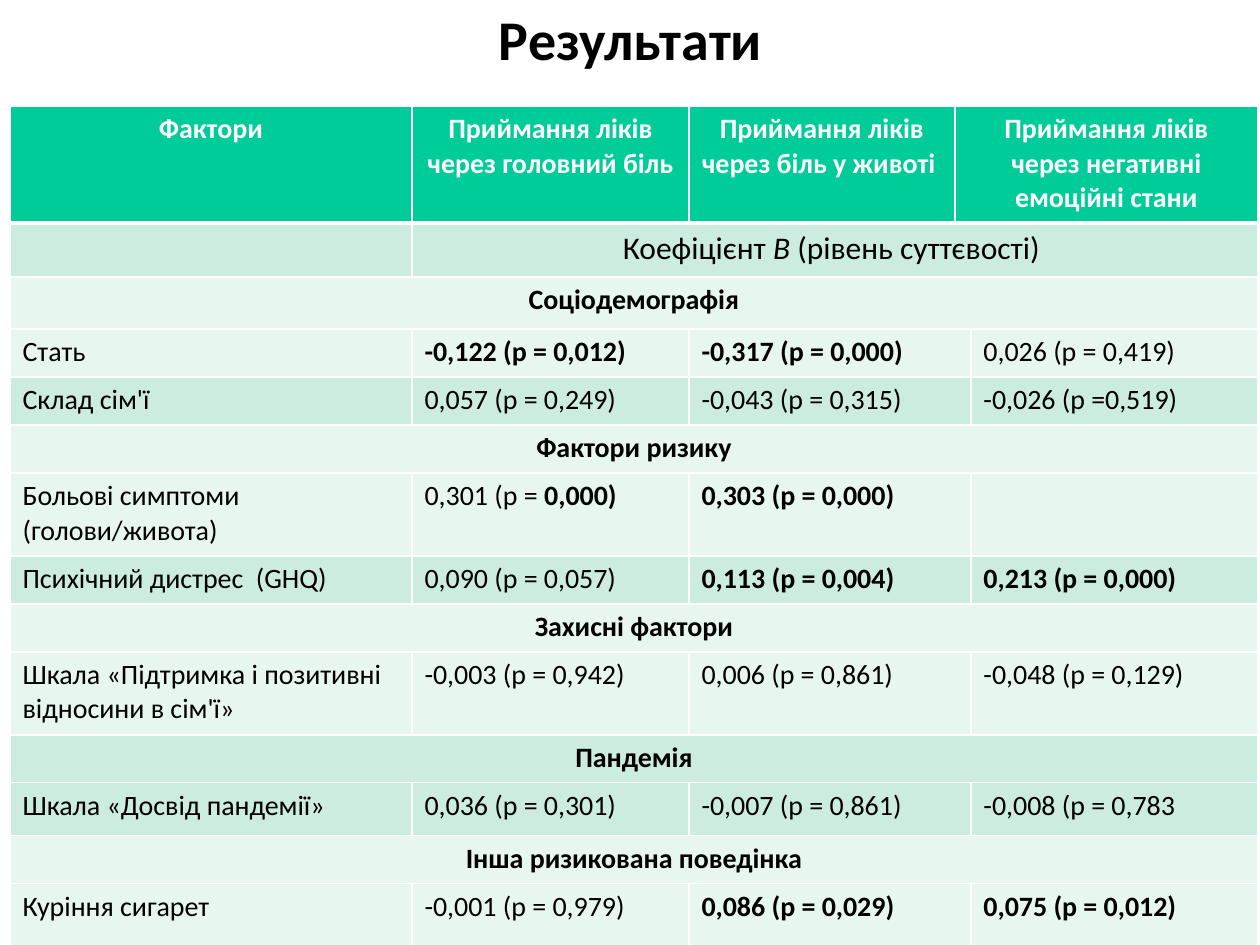
from lxml.etree import SubElement
from pptx import Presentation
from pptx.dml.color import RGBColor as RGB
from pptx.enum.text import MSO_ANCHOR as Anchor, PP_ALIGN as Align
from pptx.oxml.ns import qn
from pptx.util import Pt

PX = 7257
COLORS = {"header": "00CC99", "dark": "CBECDE", "light": "E7F6EF",
          "line": "FFFFFF", "text": "000000", "header_text": "FFFFFF"}
FONT = "Calibri"
BOLD, ITALIC = {"bold": True}, {"italic": True}

TITLE = "Результати"
HEADERS = ["Фактори", "Приймання ліків через головний біль ",
           "Приймання ліків через біль у животі ",
           "Приймання ліків через негативні емоційні стани"]
COEFFICIENT = [("Коефіцієнт ", {}), ("B", ITALIC), (" (рівень суттєвості) ", {})]


def strong(text):
    return [(text, BOLD)]


ROWS = [
    ("header", 117, HEADERS),
    ("dark", 54, ["", COEFFICIENT]),
    ("light", 52, [strong("Соціодемографія")]),
    ("light", 48, ["Стать", strong("-0,122 (p = 0,012)"),
                   strong("-0,317 (p = 0,000)"), "0,026 (p = 0,419)"]),
    ("dark", 48, ["Склад сім'ї", "0,057 (p = 0,249)",
                  "-0,043 (p = 0,315)", "-0,026 (p =0,519)"]),
    ("light", 48, [strong("Фактори ризику")]),
    ("light", 83, ["Больові симптоми (голови/живота)",
                   [("0,301 (p = ", {}), ("0,000)", BOLD)],
                   strong("0,303 (p = 0,000)"), ""]),
    ("dark", 48, ["Психічний дистрес  (GHQ)", "0,090 (p = 0,057)",
                  strong("0,113 (p = 0,004)"), strong("0,213 (p = 0,000)")]),
    ("light", 48, [strong("Захисні фактори")]),
    ("light", 83, ["Шкала «Підтримка і позитивні відносини в сім'ї»",
                   "-0,003 (p = 0,942)", "0,006 (p = 0,861)", "-0,048 (p = 0,129)"]),
    ("dark", 48, [strong("Пандемія")]),
    ("dark", 53, ["Шкала «Досвід пандемії»", "0,036 (p = 0,301)",
                  "-0,007 (p = 0,861)", "-0,008 (p = 0,783"]),
    ("light", 48, [strong("Інша ризикована поведінка")]),
    ("light", 89, ["Куріння сигарет", "-0,001 (p = 0,979)",
                   strong("0,086 (p = 0,029)"), strong("0,075 (p = 0,012)")]),
]
COLUMNS = [402, 277, 266, 16, 287]
STARTS = {"header": [0, 1, 2, 3], "values": [0, 1, 2, 4],
          "coefficient": [0, 1], "section": [0]}
LAYOUTS = {1: "section", 2: "coefficient", 4: "values"}


def write(paragraph, content, size, color, align, **style):
    paragraph.alignment = align
    runs = [(content, {})] if isinstance(content, str) else content
    for text, emphasis in runs:
        if not text:
            continue
        run = paragraph.add_run()
        run.text = text
        run.font.color.rgb = RGB.from_string(COLORS[color])
        look = {"name": FONT, "size": Pt(size), "bold": False, **style, **emphasis}
        for key, value in look.items():
            setattr(run.font, key, value)


def draw_borders(cell, **widths):
    properties = cell._tc.get_or_add_tcPr()
    for place, side in enumerate("LRTB"):
        line = SubElement(properties, qn(f"a:ln{side}"), w=str(Pt(widths.get(side, 1))))
        fill = SubElement(line, qn("a:solidFill"))
        SubElement(fill, qn("a:srgbClr"), val=COLORS["line"])
        properties.insert(place, line)


def add_results(slide):
    table = slide.shapes.add_table(
        len(ROWS), len(COLUMNS), 10 * PX, 106 * PX, sum(COLUMNS) * PX,
        sum(height for _, height, _ in ROWS) * PX).table
    for column, width in zip(table.columns, COLUMNS):
        column.width = width * PX
    for index, (tone, height, contents) in enumerate(ROWS):
        table.rows[index].height = height * PX
        widths = {0: {"B": 3}, 1: {"T": 3}}.get(index, {})
        for cell in table.rows[index].cells:
            cell.fill.solid()
            cell.fill.fore_color.rgb = RGB.from_string(COLORS[tone])
            draw_borders(cell, **widths)
        layout = "header" if tone == "header" else LAYOUTS[len(contents)]
        starts = STARTS[layout]
        ends = [start - 1 for start in starts[1:]] + [len(COLUMNS) - 1]
        align = Align.LEFT if layout == "values" else Align.CENTER
        size = 18 if layout == "coefficient" else 16
        color = "header_text" if layout == "header" else "text"
        for start, end, content in zip(starts, ends, contents):
            cell = table.cell(index, start)
            if end > start:
                cell.merge(table.cell(index, end))
            write(cell.text_frame.paragraphs[0], content, size, color, align,
                  bold=layout == "header")


def main():
    deck = Presentation()
    deck.slide_width, deck.slide_height = 1260 * PX, 945 * PX
    slide = deck.slides.add_slide(deck.slide_layouts[5])
    title = slide.shapes.title
    title.left, title.top, title.width, title.height = (
        length * PX for length in (95, 0, 1071, 76))
    title.text_frame.vertical_anchor = Anchor.MIDDLE
    write(title.text_frame.paragraphs[0], TITLE, 32, "text", Align.CENTER, bold=True)
    add_results(slide)
    deck.save("out.pptx")


if __name__ == "__main__":
    main()
